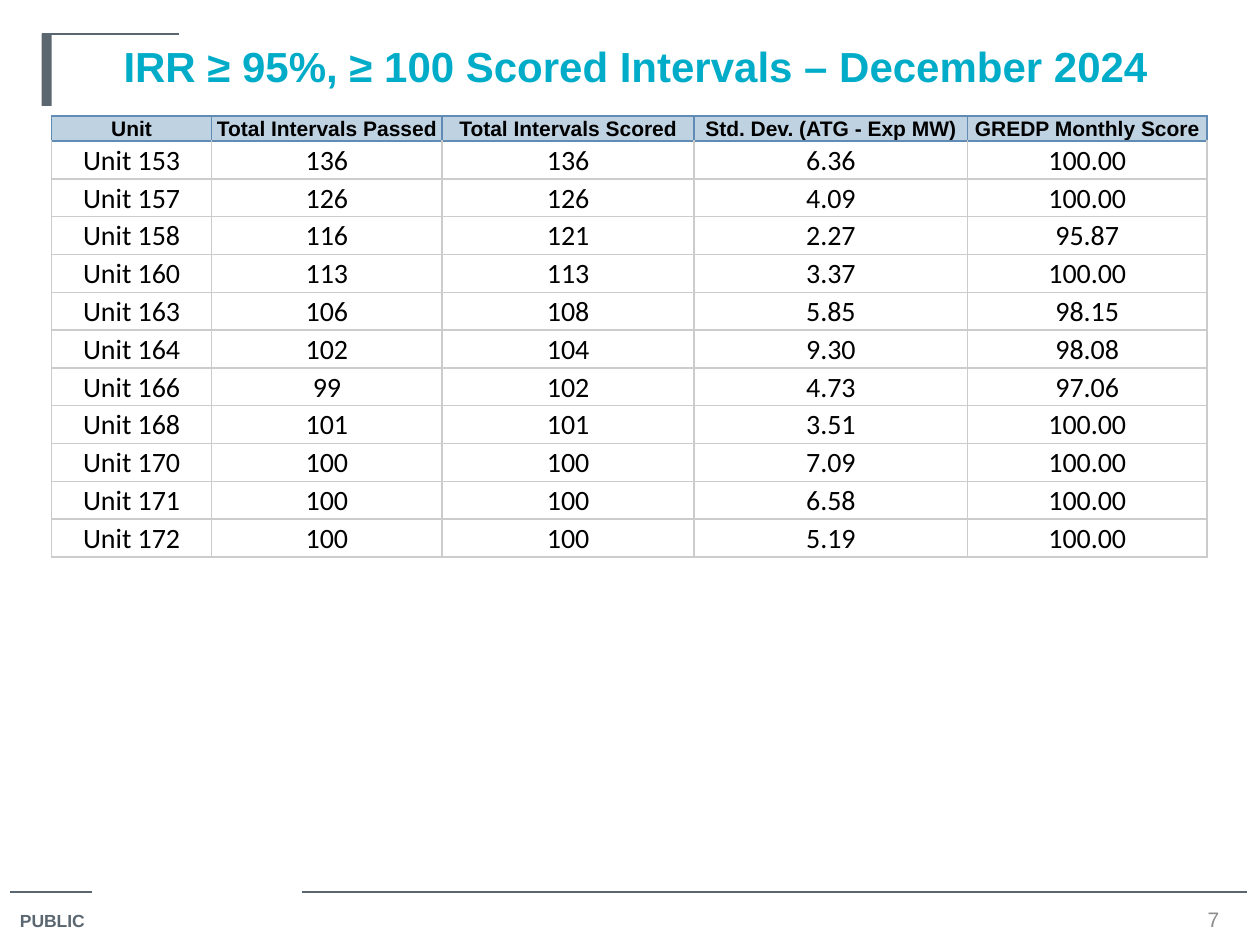
from lxml.etree import SubElement
from pptx import Presentation
from pptx.dml.color import RGBColor
from pptx.enum.shapes import MSO_CONNECTOR, MSO_SHAPE
from pptx.enum.text import MSO_ANCHOR, MSO_AUTO_SIZE, PP_ALIGN
from pptx.oxml.ns import qn
from pptx.util import Inches, Pt

# Content
HEAD = ["Unit", "Total Intervals Passed", "Total Intervals Scored",
        "Std. Dev. (ATG - Exp MW)", "GREDP Monthly Score"]
UNITS = [
    (153, 136, 136, 6.36, 100),
    (157, 126, 126, 4.09, 100),
    (158, 116, 121, 2.27, 95.87),
    (160, 113, 113, 3.37, 100),
    (163, 106, 108, 5.85, 98.15),
    (164, 102, 104, 9.30, 98.08),
    (166, 99, 102, 4.73, 97.06),
    (168, 101, 101, 3.51, 100),
    (170, 100, 100, 7.09, 100),
    (171, 100, 100, 6.58, 100),
    (172, 100, 100, 5.19, 100),
]
ROWS = [HEAD] + [[f"Unit {unit}", str(done), str(total), f"{dev:.2f}", f"{score:.2f}"]
                 for unit, done, total, dev, score in UNITS]

COLORS = {"slate": "5B6770", "teal": "00ACC8", "gray": "8C8C8C", "black": "000000",
          "head": "BFD2E2", "edge": "608BB4", "grid": "CCCCCC"}
FONTS = {
    "title": {"name": "Arial", "size": Pt(24), "bold": True, "color": "teal"},
    "label": {"name": "Arial", "size": Pt(10), "bold": True, "color": "slate"},
    "page": {"name": "Arial", "size": Pt(12), "bold": False, "color": "gray"},
    "head": {"name": "Arial", "size": Pt(12), "bold": True, "color": "black"},
    "body": {"name": "Calibri", "size": Pt(16), "bold": False, "color": "black"},
}

# Places, as percent of slide width and height
BAR = (3.3, 3.6, 0.8, 7.6)
RULES = [(0.8, 7.3, 94.4), (24, 99, 94.4), (3.3, 14.2, 3.6)]  # left, right, height
TEXTS = [
    ("PUBLIC", "label", (0.6, 95.6, 7.7, 3.73), PP_ALIGN.LEFT, MSO_ANCHOR.TOP),
    ("7", "page", (94.2, 95.73, 4.2, 3.07), PP_ALIGN.CENTER, MSO_ANCHOR.MIDDLE),
    ("IRR ≥ 95%, ≥ 100 Scored Intervals – December 2024", "title",
     (4.2, 3.6, 92.5, 10.4), PP_ALIGN.CENTER, MSO_ANCHOR.TOP),
]
COLS = [12.7, 18.3, 20, 21.7, 19]
HIGH = [2.67] + [4] * len(UNITS)
GRID = (4.1, 12.27, sum(COLS), sum(HIGH))

deck = Presentation()
deck.slide_width, deck.slide_height = Inches(10), Inches(7.5)
slide = deck.slides.add_slide(deck.slide_layouts[6])
shapes = slide.shapes


def wide(part):
    return round(deck.slide_width * part / 100)


def tall(part):
    return round(deck.slide_height * part / 100)


def place(box):
    left, top, width, height = box
    return wide(left), tall(top), wide(width), tall(height)


def color(name):
    return RGBColor.from_string(COLORS[name])


def write(frame, text, style, align):
    para = frame.paragraphs[0]
    para.alignment = align
    run = para.add_run()
    run.text = text
    for key, value in FONTS[style].items():
        if key == "color":
            run.font.color.rgb = color(value)
        else:
            setattr(run.font, key, value)


def border(cell, side, name):
    line = SubElement(cell._tc.get_or_add_tcPr(), qn(f"a:ln{side}"), w=str(Pt(1)))
    fill = SubElement(line, qn("a:solidFill"))
    SubElement(fill, qn("a:srgbClr"), val=COLORS[name])


# Rules and title bar
for left, right, level in RULES:
    rule = shapes.add_connector(MSO_CONNECTOR.STRAIGHT, wide(left), tall(level),
                                wide(right), tall(level))
    rule.line.color.rgb = color("slate")
    rule.line.width = Pt(0.75)
    SubElement(rule._element.spPr, qn("a:effectLst"))

bar = shapes.add_shape(MSO_SHAPE.RECTANGLE, *place(BAR))
bar.shadow.inherit = False
bar.fill.solid()
bar.fill.fore_color.rgb = color("slate")
bar.line.fill.background()

# Title, label and page number
for text, style, box, align, anchor in TEXTS:
    frame = shapes.add_textbox(*place(box)).text_frame
    frame.word_wrap = True
    frame.auto_size = MSO_AUTO_SIZE.NONE
    frame.vertical_anchor = anchor
    write(frame, text, style, align)

# Score table
table = shapes.add_table(len(ROWS), len(COLS), *place(GRID)).table
table.first_row = table.horz_banding = False
for col, width in zip(table.columns, COLS):
    col.width = wide(width)
for row, height in zip(table.rows, HIGH):
    row.height = tall(height)

CELL = {"vertical_anchor": MSO_ANCHOR.MIDDLE, "margin_left": Inches(0.01),
        "margin_right": Inches(0.01), "margin_top": Inches(0.01), "margin_bottom": 0}
for r, row in enumerate(ROWS):
    for c, text in enumerate(row):
        cell = table.cell(r, c)
        for key, value in CELL.items():
            setattr(cell, key, value)
        for side in "LRTB":
            edge = r == 0 or (r == 1 and side == "T")
            border(cell, side, "edge" if edge else "grid")
        if r == 0:
            cell.fill.solid()
            cell.fill.fore_color.rgb = color("head")
        else:
            cell.fill.background()
        write(cell.text_frame, text, "body" if r else "head", PP_ALIGN.CENTER)

deck.save("out.pptx")
